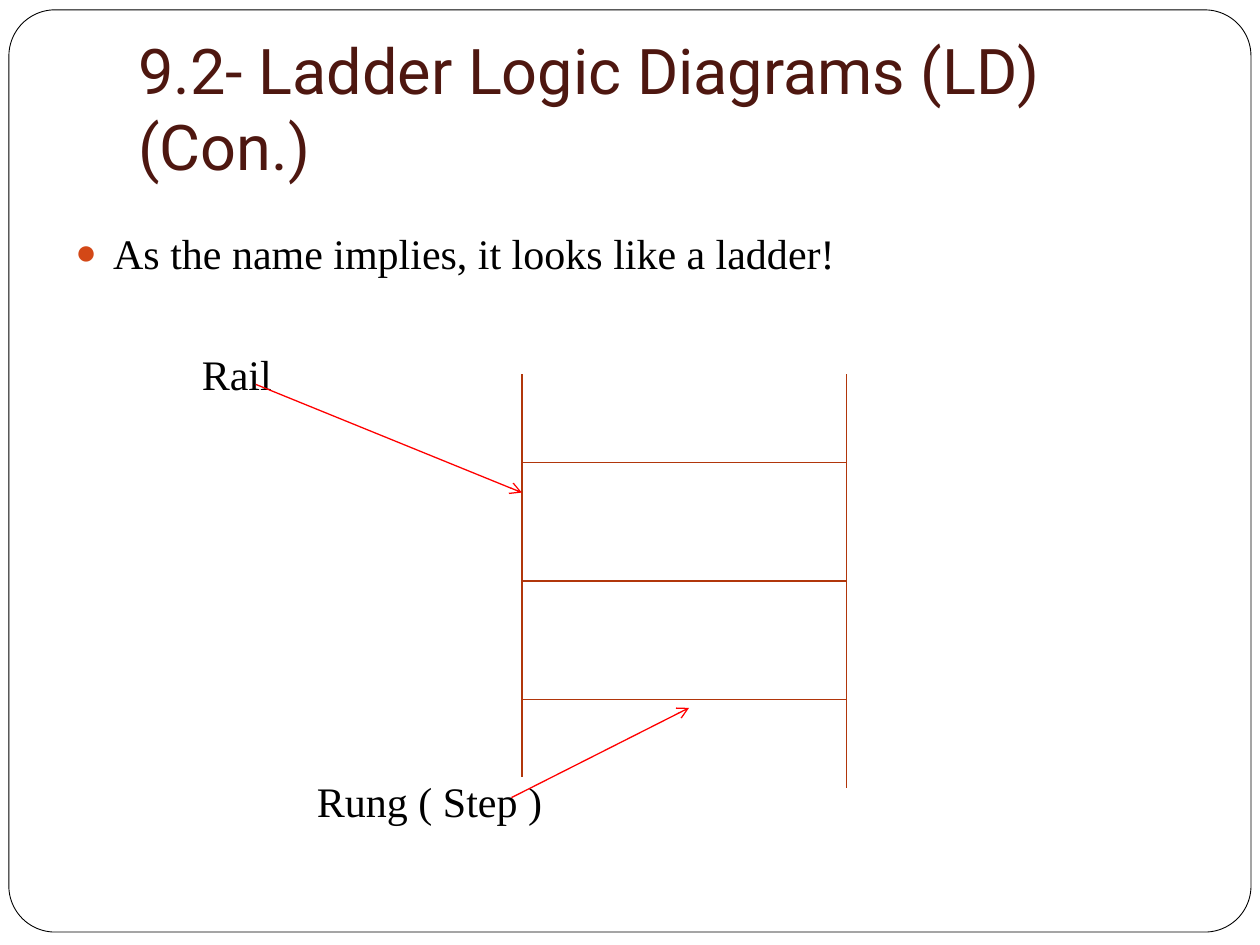
"""Build the ladder logic diagram slide with its labelled rails and rungs."""
from lxml import etree
from pptx import Presentation
from pptx.dml.color import RGBColor
from pptx.enum.shapes import MSO_CONNECTOR, MSO_SHAPE
from pptx.enum.text import MSO_ANCHOR, MSO_AUTO_SIZE, PP_ALIGN
from pptx.oxml.ns import qn
from pptx.util import Cm, Pt

STRAIGHT = MSO_CONNECTOR.STRAIGHT
ROUNDED = MSO_SHAPE.ROUNDED_RECTANGLE
TOP, BOTTOM = MSO_ANCHOR.TOP, MSO_ANCHOR.BOTTOM
LEFT = PP_ALIGN.LEFT
NO_FIT = MSO_AUTO_SIZE.NONE
COLORS = {"paper": "FFFFFF", "frame": "000000", "title": "4E1710", "text": "000000",
          "bullet": "D34817", "ladder": "B1360B", "pointer": "FF0000"}


def format_text(p, text, font, size, color):
    r = p.add_run()
    r.text = text
    for name, value in {"name": font, "size": Pt(size), "bold": False}.items():
        setattr(r.font, name, value)
    r.font.color.rgb = RGBColor.from_string(COLORS[color])
    p.alignment = LEFT


def add_line(s, x1, y1, x2, y2, color):
    line = s.shapes.add_connector(STRAIGHT, Cm(x1), Cm(y1), Cm(x2), Cm(y2))
    line.line.color.rgb = RGBColor.from_string(COLORS[color])
    line.line.width = Pt(0.75)
    etree.SubElement(line._element.spPr, qn("a:effectLst"))
    return line


prs = Presentation()
prs.slide_width, prs.slide_height = Cm(25.4), Cm(19.05)
s = prs.slides.add_slide(prs.slide_layouts[1])
title, body = s.placeholders

frame = s.shapes.add_shape(ROUNDED, Cm(0.18), Cm(0.2), Cm(25.04), Cm(18.59))
frame.adjustments[0] = 0.05
frame.shadow.inherit = False
frame.fill.solid()
frame.fill.fore_color.rgb = RGBColor.from_string(COLORS["paper"])
frame.line.color.rgb = RGBColor.from_string(COLORS["frame"])
frame.line.width = Pt(0.5)
title._element.addprevious(frame._element)

boxes = [
    (title, {"left": Cm(2.54), "top": Cm(0.76), "width": Cm(22.28), "height": Cm(3.18)},
     {"vertical_anchor": BOTTOM, "margin_bottom": Cm(0.25)}),
    (body, {"left": Cm(1.27), "top": Cm(4.45), "width": Cm(22.56), "height": Cm(13)},
     {"vertical_anchor": TOP, "margin_bottom": Cm(0.13)}),
]
for sp, place, layout in boxes:
    for name, value in place.items():
        setattr(sp, name, value)
    layout.update(auto_size=NO_FIT, word_wrap=True, margin_left=Cm(0.25),
                  margin_right=Cm(0.25), margin_top=Cm(0.13))
    for name, value in layout.items():
        setattr(sp.text_frame, name, value)

format_text(title.text_frame.paragraphs[0], "9.2- Ladder Logic Diagrams (LD) (Con.)",
            "Roboto", 36, "title")

tf = body.text_frame
lines = [("As the name implies, it looks like a ladder!", 0.76, -0.76, 5.8),
         ("Rail", 2.55, 0, 40.8),
         ("Rung ( Step )", 4.87, 0, 214.8)]
for i, (text, margin, indent, space) in enumerate(lines):
    p = tf.add_paragraph() if i else tf.paragraphs[0]
    format_text(p, text, "Times New Roman", 24, "text")
    p.space_before = Pt(space)
    pPr = p._p.get_or_add_pPr()
    pPr.set("marL", str(Cm(margin)))
    pPr.set("indent", str(Cm(indent)))
    if indent:
        color = etree.SubElement(pPr, qn("a:buClr"))
        etree.SubElement(color, qn("a:srgbClr"), val=COLORS["bullet"])
        etree.SubElement(pPr, qn("a:buSzPct"), val="85000")
        etree.SubElement(pPr, qn("a:buChar"), char="●")
    else:
        etree.SubElement(pPr, qn("a:buNone"))

rail_left, rail_right, rail_top = 10.52, 17.07, 7.54
for x, bottom in [(rail_right, 15.88), (rail_left, 15.67)]:
    add_line(s, x, rail_top, x, bottom, "ladder")
for i in range(3):
    y = 9.32 + i * 2.39
    add_line(s, rail_right, y, rail_left, y, "ladder")

for ends in [(5.16, 7.75, rail_left, 9.93), (10.31, 16.08, 13.89, 14.27)]:
    pointer = add_line(s, *ends, "pointer")
    etree.SubElement(pointer.line._get_or_add_ln(), qn("a:tailEnd"), type="arrow")

prs.save("out.pptx")
